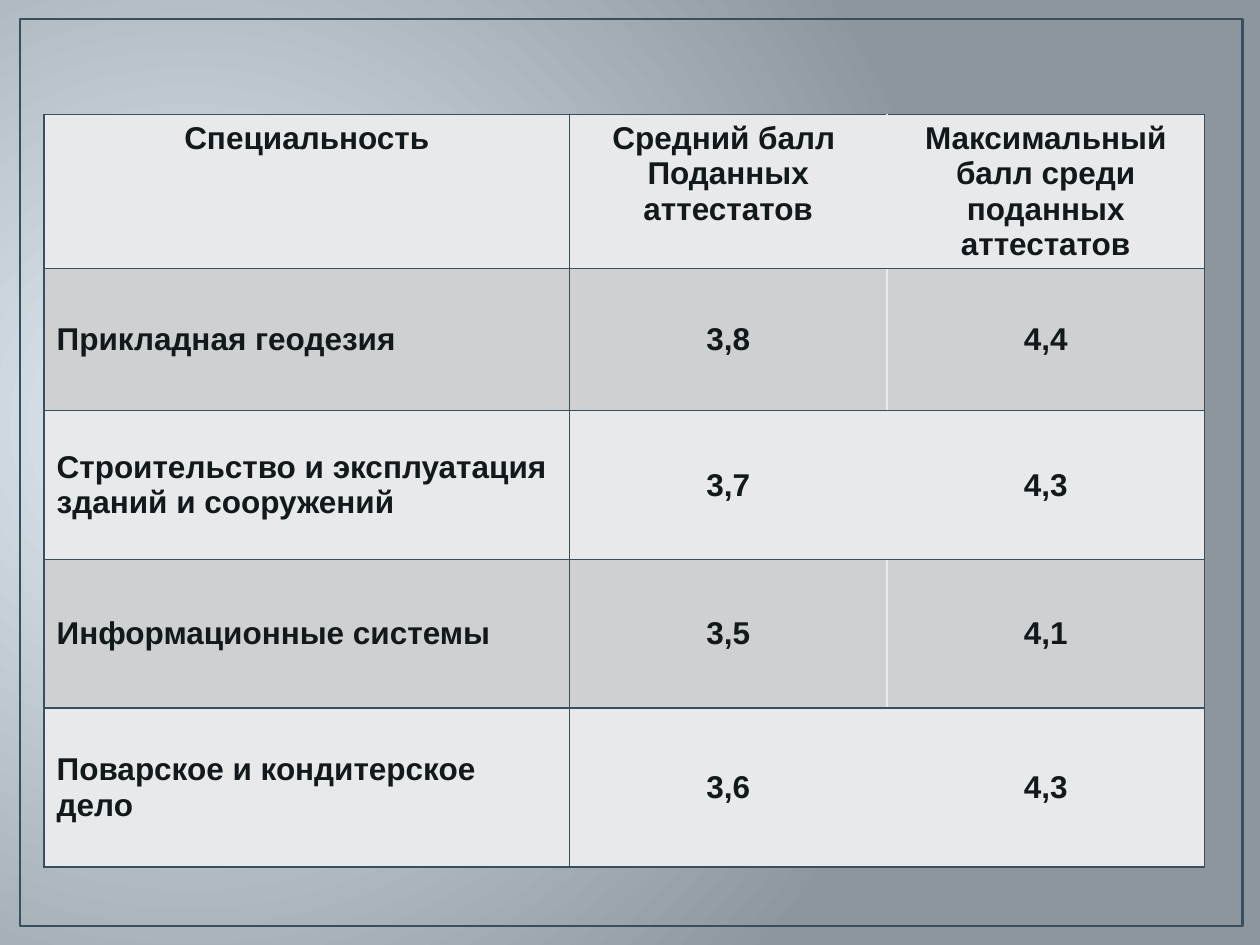
from dataclasses import dataclass

from lxml.etree import SubElement
from pptx import Presentation
from pptx.dml.color import RGBColor
from pptx.enum.shapes import MSO_SHAPE as Shape
from pptx.enum.text import MSO_ANCHOR as Anchor, PP_ALIGN as Align
from pptx.oxml.ns import qn
from pptx.util import Inches, Pt


@dataclass(frozen=True)
class Theme:
    font: str = "Arial"
    text_size: int = 18
    text: str = "12191D"
    line: str = "394F60"
    divider: str = "E5EBEF"
    light_row: str = "E8E9EA"
    dark_row: str = "CED0D2"
    glow: str = "E1ECF4"
    backdrop: str = "8C969C"
    frame_width: float = 1.5
    border_width: float = 1


THEME = Theme()

COLUMN_WIDTHS = (4.17, 2.52, 2.52)
ROW_HEIGHTS = (0.41, 1.13, 1.18, 1.18, 1.26)
ROWS = (
    ("Специальность", "Средний балл \nПоданных аттестатов",
     "Максимальный балл среди поданных аттестатов"),
    ("Прикладная геодезия", "3,8", "4,4"),
    ("Строительство и эксплуатация зданий и сооружений", "3,7", "4,3"),
    ("Информационные системы", "3,5", "4,1"),
    ("Поварское и кондитерское дело", "3,6", "4,3"),
)


def paint_background(page):
    """Fill the page with a radial gradient that glows from the left."""
    fill = page.background.fill
    fill.gradient()
    for stop, color in zip(fill.gradient_stops, (THEME.glow, THEME.backdrop)):
        stop.color.rgb = RGBColor.from_string(color)
    gradient = page.element.find(".//" + qn("a:gradFill"))
    gradient.remove(gradient.find(qn("a:lin")))
    circle = SubElement(gradient, qn("a:path"), path="circle")
    SubElement(circle, qn("a:fillToRect"), l="15000", t="50000", r="85000", b="60000")


def add_frame(page):
    frame = page.shapes.add_shape(
        Shape.RECTANGLE, Inches(0.16), Inches(0.15), Inches(9.7), Inches(7.2))
    frame.shadow.inherit = False
    frame.fill.background()
    frame.line.color.rgb = RGBColor.from_string(THEME.line)
    frame.line.width = Pt(THEME.frame_width)


def set_borders(cell, **colors):
    """Draw cell borders; sides are named L, R, T and B, in that order."""
    properties = cell._tc.get_or_add_tcPr()
    for position, (side, color) in enumerate(colors.items()):
        line = SubElement(properties, qn(f"a:ln{side}"), w=str(Pt(THEME.border_width)))
        solid = SubElement(line, qn("a:solidFill"))
        SubElement(solid, qn("a:srgbClr"), val=color)
        properties.insert(position, line)


def write_cell(cell, text, align):
    for index, words in enumerate(text.split("\n")):
        frame = cell.text_frame
        para = frame.add_paragraph() if index else frame.paragraphs[0]
        para.alignment = align
        span = para.add_run()
        span.text = words
        span.font.name = THEME.font
        span.font.size = Pt(THEME.text_size)
        span.font.bold = True
        span.font.color.rgb = RGBColor.from_string(THEME.text)


def add_score_table(page):
    height = Inches(5.75)
    holder = page.shapes.add_table(
        len(ROWS), len(COLUMN_WIDTHS), Inches(0.35), Inches(0.91),
        Inches(sum(COLUMN_WIDTHS)), height)
    table = holder.table
    table.first_row = table.horz_banding = False
    for column, width in zip(table.columns, COLUMN_WIDTHS):
        column.width = Inches(width)
    for row, row_height in zip(table.rows, ROW_HEIGHTS):
        row.height = Inches(row_height)
    holder.height = height

    for r, texts in enumerate(ROWS):
        for c, text in enumerate(texts):
            cell = table.cell(r, c)
            cell.vertical_anchor = Anchor.MIDDLE if r else Anchor.TOP
            cell.fill.solid()
            cell.fill.fore_color.rgb = RGBColor.from_string(
                THEME.dark_row if r % 2 else THEME.light_row)
            write_cell(cell, text, Align.LEFT if r and not c else Align.CENTER)
            set_borders(
                cell,
                L=THEME.divider if c == 2 else THEME.line,
                R=THEME.divider if c == 1 else THEME.line,
                T=THEME.line,
                B=THEME.line)


def main():
    deck = Presentation()
    deck.slide_width, deck.slide_height = Inches(10), Inches(7.5)
    blank_layout = deck.slide_layouts[6]
    page = deck.slides.add_slide(blank_layout)
    paint_background(page)
    add_frame(page)
    add_score_table(page)
    deck.save("out.pptx")


if __name__ == "__main__":
    main()
